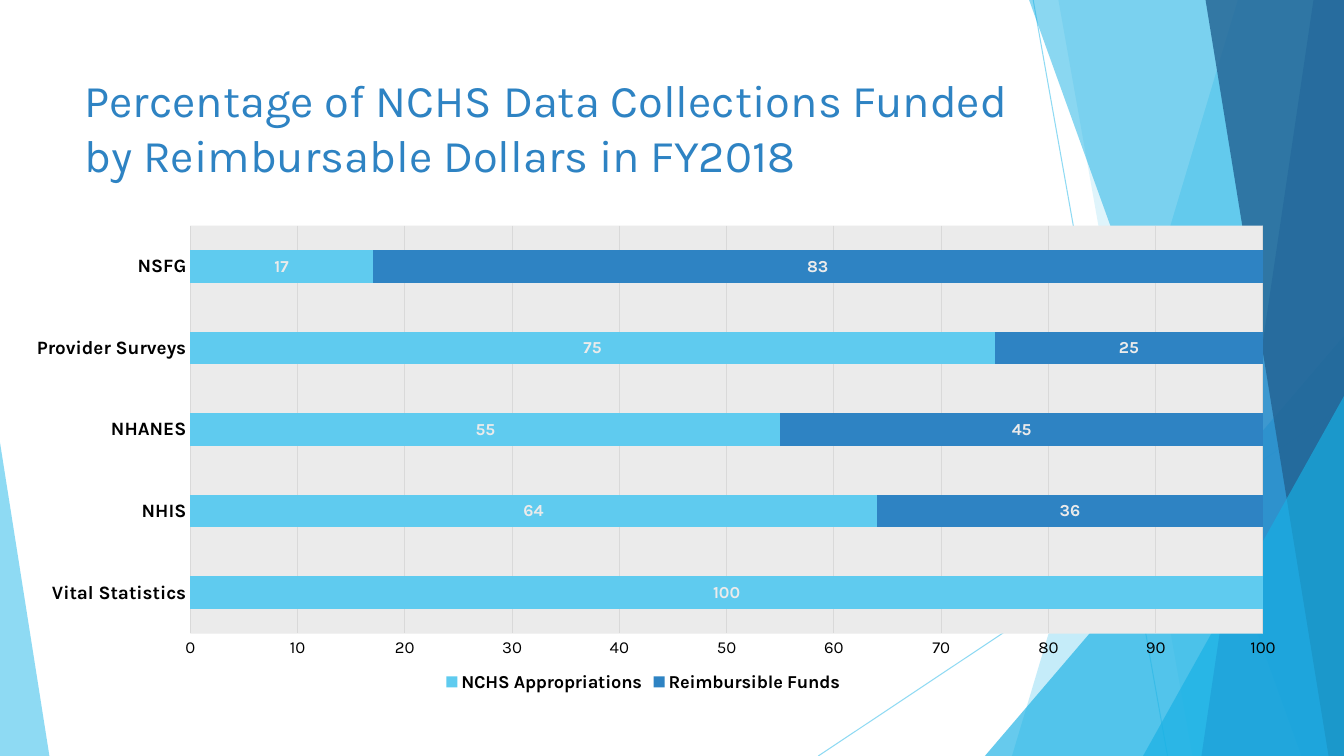
from lxml.etree import SubElement
from pptx import Presentation
from pptx.chart.data import CategoryChartData
from pptx.dml.color import RGBColor
from pptx.enum.chart import XL_CHART_TYPE, XL_LABEL_POSITION, XL_LEGEND_POSITION, XL_TICK_MARK
from pptx.enum.shapes import MSO_CONNECTOR, MSO_SHAPE
from pptx.enum.text import MSO_ANCHOR
from pptx.oxml import parse_xml
from pptx.oxml.ns import nsdecls, qn
from pptx.util import Pt

WIDTH, HEIGHT = 960, 540
FONT = "Karla"
COLORS = {"sky": "5FCBEF", "cyan": "17B0E4", "blue": "2E83C3", "navy": "226292",
          "grid": "D9D9D9", "plot": "EBEBEB", "text": "000000"}

TITLE = "Percentage of NCHS Data Collections Funded by Reimbursable Dollars in FY2018"
CATEGORIES = ["Vital Statistics", "NHIS", "NHANES", "Provider Surveys", "NSFG"]
SERIES = [("NCHS Appropriations", [100, 64, 55, 75, 17], "sky"),
          ("Reimbursible Funds", [0, 36, 45, 25, 83], "blue")]
PLOT_AREA = {"x": 0.148, "y": 0.027, "w": 0.834, "h": 0.843}

# Facets from back to front; each ends with colour and opacity in percent
LINES = [(738, 0, 834, HEIGHT), (WIDTH, 290, 584.5, HEIGHT)]
FACETS = [  # band: left edge at top and bottom; triangle: left, top, width, apex
    ("band", (884.2, 722.9), "sky", 36),
    ("band", (756, 851.8), "sky", 20),
    ("triangle", (703.5, 239.8, 256.5, 1), "cyan", 66),
    ("band", (735.1, 929.5), "cyan", 50),
    ("band", (938.2, 858.2), "blue", 70),
    ("band", (861.1, 949), "navy", 80),
    ("triangle", (816.5, 283, 143.5, 1), "cyan", 66),
    ("triangle", (0, 316.1, 35.3, 0), "sky", 70),
]


def color(name):
    return RGBColor.from_string(COLORS[name])


def paint(fill, name, opacity=100):
    fill.solid()
    fill.fore_color.rgb = color(name)
    if opacity < 100:
        tone = fill._xPr.find(qn("a:solidFill"))[0]
        SubElement(tone, qn("a:alpha"), val=str(opacity * 1000))


def set_font(font, size, name="text", bold=False):
    font.name, font.size, font.bold = FONT, Pt(size), bold
    font.color.rgb = color(name)


def add_line(page, start_x, start_y, end_x, end_y):
    line = page.shapes.add_connector(
        MSO_CONNECTOR.STRAIGHT, Pt(start_x), Pt(start_y), Pt(end_x), Pt(end_y))
    line.line.width = Pt(0.75)
    paint(line.line.fill, "sky", 70)
    SubElement(line._element.spPr, qn("a:effectLst"))


def add_facet(page, kind, place, name, opacity):
    if kind == "band":
        top_x, bottom_x = place
        outline = page.shapes.build_freeform(Pt(top_x), 0)
        outline.add_line_segments(
            [(Pt(WIDTH), 0), (Pt(WIDTH), Pt(HEIGHT)), (Pt(bottom_x), Pt(HEIGHT))])
        facet = outline.convert_to_shape()
    else:
        left, top, width, apex = place
        facet = page.shapes.add_shape(
            MSO_SHAPE.ISOSCELES_TRIANGLE, Pt(left), Pt(top), Pt(width), Pt(HEIGHT - top))
        facet.adjustments[0] = apex
    paint(facet.fill, name, opacity)
    facet.line.fill.background()
    facet.shadow.inherit = False


def add_title(page):
    box = page.shapes.add_textbox(Pt(53.3), Pt(48.2), Pt(676.8), Pt(103.7))
    frame = box.text_frame
    frame.word_wrap = True
    frame.vertical_anchor = MSO_ANCHOR.TOP
    para = frame.paragraphs[0]
    para.text = TITLE
    set_font(para.font, 32.4, "blue")


def add_funding_chart(page):
    data = CategoryChartData()
    data.categories = CATEGORIES
    for name, values, _ in SERIES:
        data.add_series(name, values)
    chart = page.shapes.add_chart(
        XL_CHART_TYPE.BAR_STACKED, 0, Pt(151.9), Pt(918.7), Pt(345.6), data).chart
    set_font(chart.font, 10)
    chart.has_title = False

    # Bars and their labels; the number format hides zero
    plot = chart.plots[0]
    plot.gap_width, plot.overlap, plot.vary_by_categories = 150, 100, False
    for series, (_, _, tone) in zip(plot.series, SERIES):
        paint(series.format.fill, tone)
        labels = series.data_labels
        labels.show_value = True
        labels.position = XL_LABEL_POSITION.CENTER
        labels.number_format, labels.number_format_is_linked = "0;;;", False
        set_font(labels.font, 12, "plot", True)

    # Axes
    rows, scale = chart.category_axis, chart.value_axis
    for axis, size, bold in ((rows, 13.5, True), (scale, 12, False)):
        axis.major_tick_mark = axis.minor_tick_mark = XL_TICK_MARK.NONE
        set_font(axis.tick_labels.font, size, "text", bold)
    scale.minimum_scale, scale.maximum_scale, scale.major_unit = 0, 100, 10
    scale.has_major_gridlines = True
    scale.format.line.fill.background()
    for line in (rows.format.line, scale.major_gridlines.format.line):
        line.width = Pt(0.75)
        paint(line.fill, "grid")

    # Legend
    chart.has_legend = True
    chart.legend.position = XL_LEGEND_POSITION.BOTTOM
    chart.legend.include_in_layout = False
    set_font(chart.legend.font, 13, "text", True)

    # Plot area: fixed inner frame and grey fill
    area = chart._chartSpace.chart.plotArea
    for old in area.findall(qn("c:layout")):
        area.remove(old)
    sizes = "".join(f'<c:{key} val="{value}"/>' for key, value in PLOT_AREA.items())
    area.insert(0, parse_xml(
        f'<c:layout {nsdecls("c")}><c:manualLayout><c:layoutTarget val="inner"/>'
        f'<c:xMode val="edge"/><c:yMode val="edge"/>{sizes}</c:manualLayout></c:layout>'))
    area.append(parse_xml(
        f'<c:spPr {nsdecls("c", "a")}><a:solidFill><a:srgbClr val="{COLORS["plot"]}"/>'
        '</a:solidFill><a:ln><a:noFill/></a:ln></c:spPr>'))


def main():
    deck = Presentation()
    deck.slide_width, deck.slide_height = Pt(WIDTH), Pt(HEIGHT)
    page = deck.slides.add_slide(deck.slide_layouts[6])
    for line in LINES:
        add_line(page, *line)
    for facet in FACETS:
        add_facet(page, *facet)
    add_title(page)
    add_funding_chart(page)
    deck.save("out.pptx")


if __name__ == "__main__":
    main()
